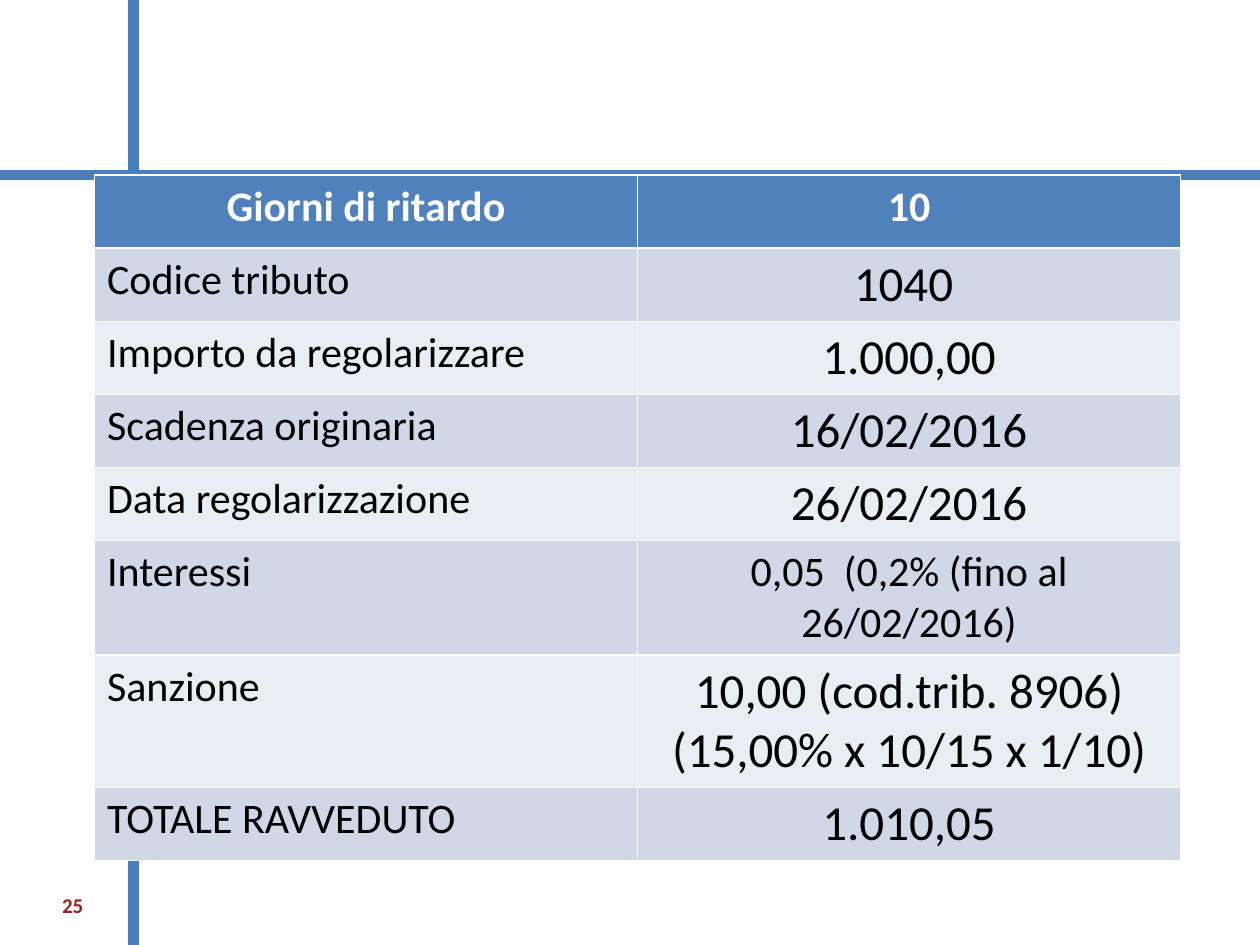
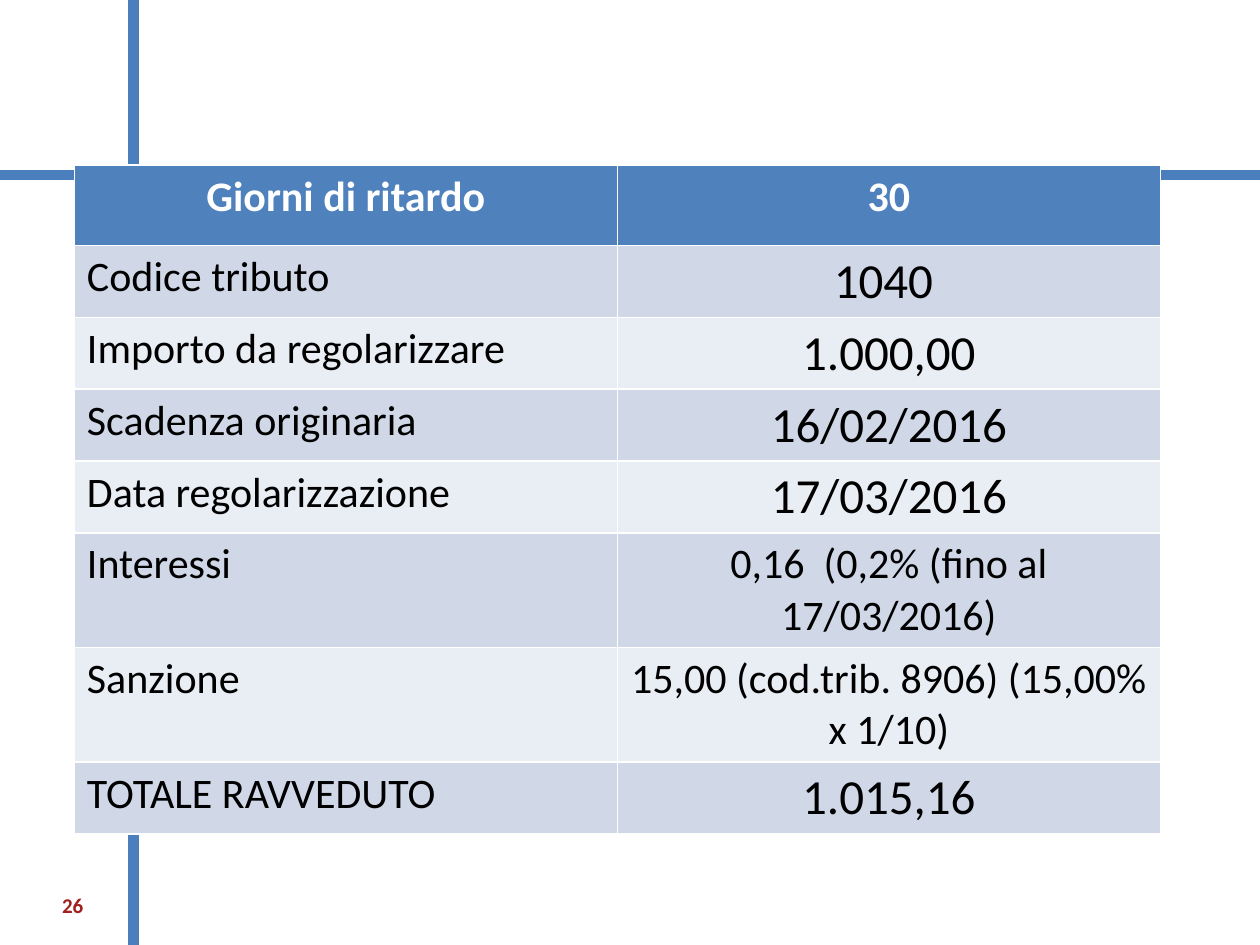
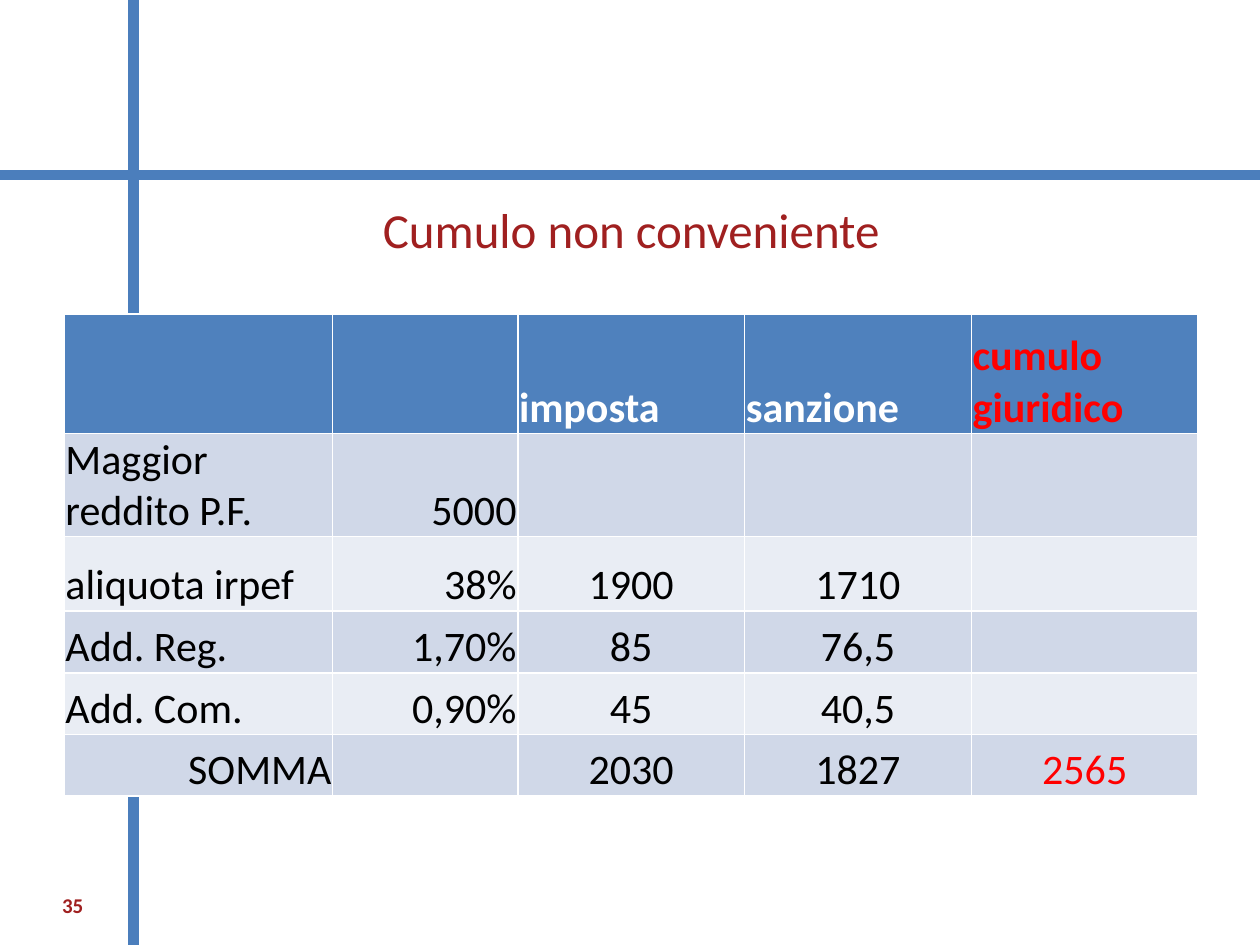
"""Build three slides on late-payment regularisation and cumulated penalties."""
import pptx
import pptx.dml.color
import pptx.enum.shapes
import pptx.enum.text
import pptx.oxml
import pptx.util

Inches = pptx.util.Inches
Pt = pptx.util.Pt
RGBColor = pptx.dml.color.RGBColor
Align = pptx.enum.text.PP_ALIGN
Anchor = pptx.enum.text.MSO_ANCHOR

RULE_BLUE = RGBColor(0x4B, 0x7E, 0xBC)
HEADER_BLUE = RGBColor(0x4F, 0x81, 0xBD)
BANDS = (RGBColor(0xE9, 0xED, 0xF4), RGBColor(0xD0, 0xD8, 0xE8))
DARK_RED = RGBColor(0xA0, 0x20, 0x20)
RED = RGBColor(0xFF, 0, 0)
WHITE = RGBColor(0xFF, 0xFF, 0xFF)
BLACK = RGBColor(0, 0, 0)
TITLE_ONLY, BLANK = 5, 6

DELAY_LABELS = (
    "Giorni di ritardo", "Codice tributo", "Importo da regolarizzare",
    "Scadenza originaria", "Data regolarizzazione", "Interessi",
    "Sanzione", "TOTALE RAVVEDUTO",
)
PENALTY_ROWS = (
    ("", "", "imposta", "sanzione", "cumulo giuridico"),
    ("Maggior reddito P.F.", "5000", "", "", ""),
    ("aliquota irpef", "38%", "1900", "1710", ""),
    ("Add. Reg.", "1,70%", "85", "76,5", ""),
    ("Add. Com.", "0,90%", "45", "40,5", ""),
    ("SOMMA", "", "2030", "1827", "2565"),
)


class Deck:
    def __init__(self):
        self.presentation = pptx.Presentation()
        self.presentation.slide_width = Inches(10)
        self.presentation.slide_height = Inches(7.5)
        self.slide = None

    def new_slide(self, number, layout=BLANK):
        layouts = self.presentation.slide_layouts
        self.slide = self.presentation.slides.add_slide(layouts[layout])
        self.rule(1.06, 0, 1.06, 7.5)
        self.rule(0, 1.39, 10, 1.39)
        self.page_number(number)

    def rule(self, *ends):
        rule = self.slide.shapes.add_connector(
            pptx.enum.shapes.MSO_CONNECTOR.STRAIGHT, *map(Inches, ends))
        rule.line.color.rgb = RULE_BLUE
        rule.line.width = Pt(6)
        properties = rule._element.spPr
        properties.append(pptx.oxml.parse_xml(
            '<a:effectLst xmlns:a='
            '"http://schemas.openxmlformats.org/drawingml/2006/main"/>'))

    def set_text(self, frame, text, size, color, align, bold=False):
        frame.text = text
        frame.word_wrap = True
        paragraph = frame.paragraphs[0]
        paragraph.alignment = align
        for run in paragraph.runs:
            run.font.name = "Calibri"
            run.font.size = Pt(size)
            run.font.bold = bold
            run.font.color.rgb = color

    def page_number(self, number):
        footer = self.slide.shapes.add_textbox(
            Inches(0.35), Inches(6.98), Inches(0.41), Inches(0.4))
        footer.text_frame.vertical_anchor = Anchor.MIDDLE
        self.set_text(footer.text_frame, str(number), 12, DARK_RED,
                      Align.RIGHT, True)

    def title(self, text):
        title = self.slide.shapes.title
        title.left, title.top = Inches(0.51), Inches(1.31)
        title.width, title.height = Inches(9), Inches(1.01)
        title.text_frame.vertical_anchor = Anchor.MIDDLE
        self.set_text(title.text_frame, text, 28, DARK_RED, Align.CENTER)

    def table(self, rows, left, top, widths, heights):
        table = self.slide.shapes.add_table(
            len(rows), len(widths), Inches(left), Inches(top),
            Inches(sum(widths)), Inches(sum(heights))).table
        for column, width in zip(table.columns, widths):
            column.width = Inches(width)
        for index, (row, height) in enumerate(zip(table.rows, heights)):
            row.height = Inches(height)
            for cell in row.cells:
                cell.fill.solid()
                cell.fill.fore_color.rgb = (
                    BANDS[index % 2] if index else HEADER_BLUE)
        return table

    def delay_table(self, values, left, top, heights, small_rows):
        rows = list(zip(DELAY_LABELS, values))
        table = self.table(rows, left, top, (4.31, 4.31), heights)
        for index, (label, value) in enumerate(rows):
            header = index == 0
            color = WHITE if header else BLACK
            size = 24 if index in small_rows else 28
            self.set_text(table.cell(index, 0).text_frame, label, 24, color,
                          Align.CENTER if header else Align.LEFT, header)
            self.set_text(table.cell(index, 1).text_frame, value, size, color,
                          Align.CENTER, header)

    def penalty_table(self, rows, left, top, widths, heights):
        table = self.table(rows, left, top, widths, heights)
        alignments = (Align.LEFT, Align.RIGHT) + (Align.CENTER,) * 3
        for index, row in enumerate(rows):
            for column, text in enumerate(row):
                if not text:
                    continue
                cell = table.cell(index, column)
                cell.vertical_anchor = Anchor.BOTTOM
                cell.margin_left = cell.margin_right = Inches(0.01)
                cell.margin_top, cell.margin_bottom = Inches(0.01), 0
                header = index == 0
                align = Align.LEFT if header else alignments[column]
                if text == "SOMMA":
                    align = Align.RIGHT
                color = WHITE if header else BLACK
                if column == 4:
                    color = RED
                self.set_text(cell.text_frame, text, 24, color, align, header)


def main():
    deck = Deck()

    deck.new_slide(25)
    deck.delay_table(
        ("10", "1040 ", "1.000,00", "16/02/2016", "26/02/2016",
         "0,05  (0,2% (fino al 26/02/2016)",
         "10,00 (cod.trib. 8906) (15,00% x 10/15 x 1/10)", "1.010,05"),
        0.75, 1.39, [0.58] * 5 + [0.91, 1.05, 0.58], (0, 5))

    deck.new_slide(26)
    deck.delay_table(
        ("30", "1040 ", "1.000,00", "16/02/2016", "17/03/2016",
         "0,16  (0,2% (fino al 17/03/2016)",
         "15,00 (cod.trib. 8906) (15,00% x 1/10)", "1.015,16"),
        0.59, 1.31, [0.64] + [0.57] * 4 + [0.91, 0.91, 0.57], (0, 5, 6))

    deck.new_slide(35, TITLE_ONLY)
    deck.title("Cumulo non conveniente")
    deck.penalty_table(PENALTY_ROWS, 0.51, 2.49, [2.13, 1.47] + [1.8] * 3,
                       [0.95, 0.82, 0.59] + [0.49] * 3)

    deck.presentation.save("out.pptx")


if __name__ == "__main__":
    main()
